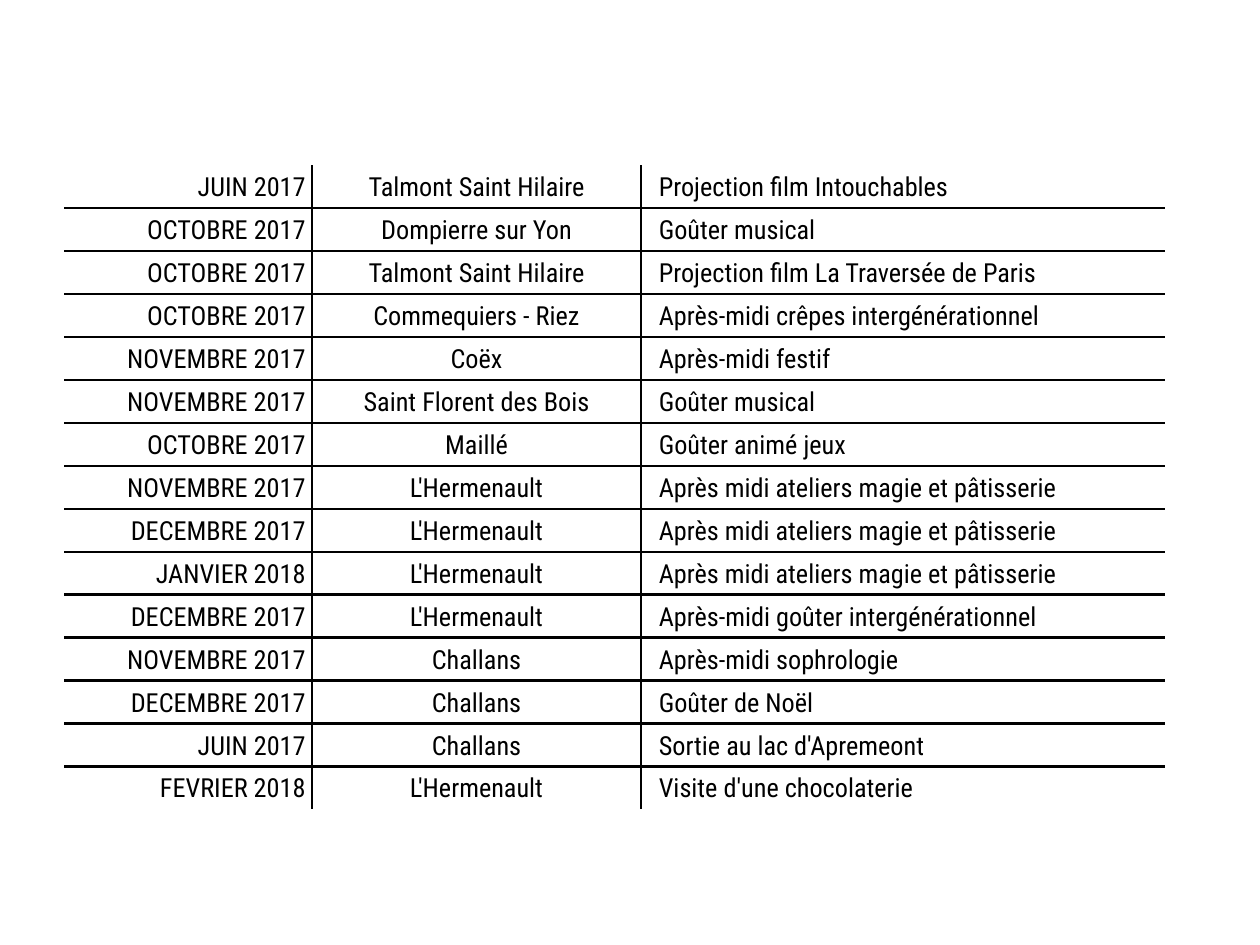
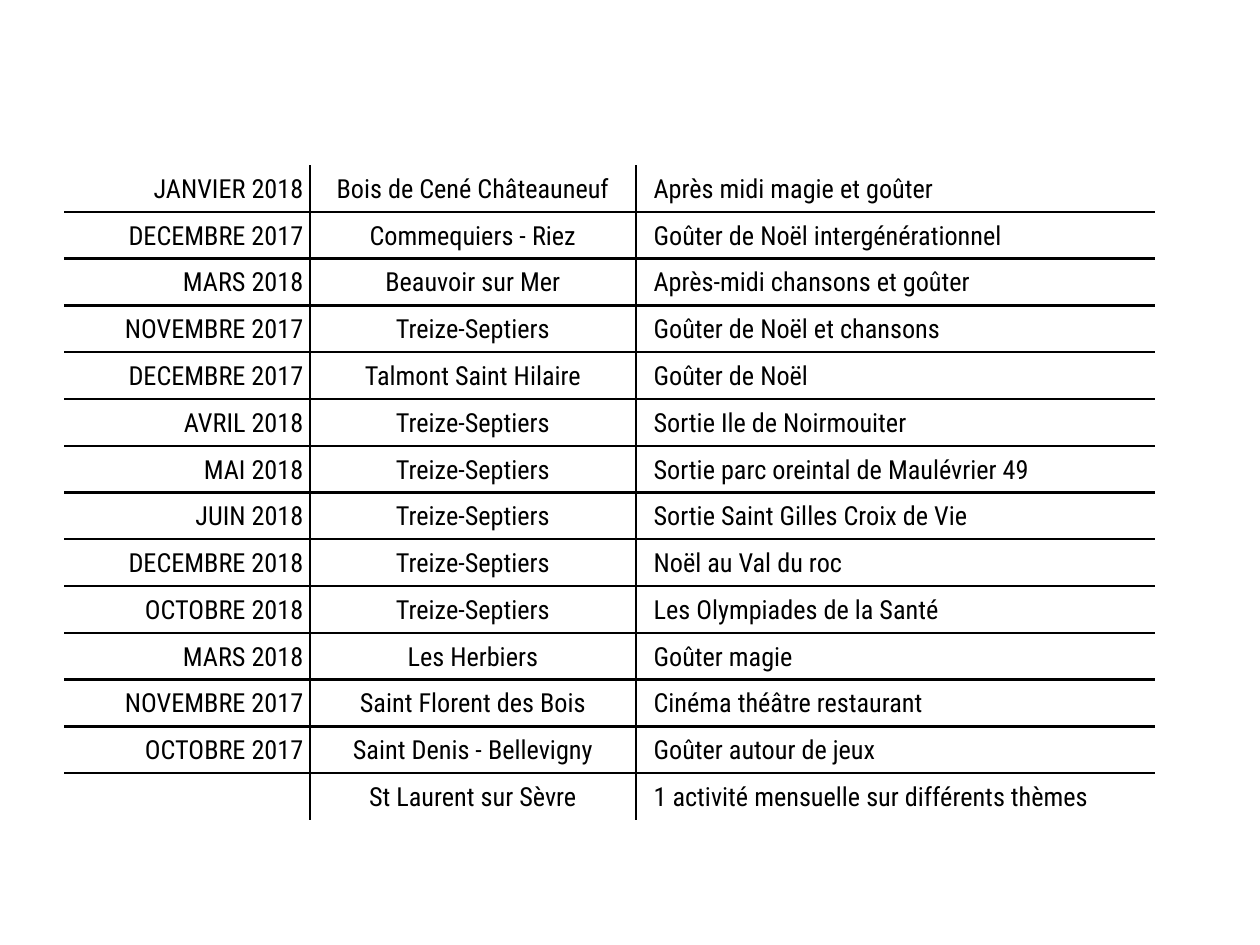
from lxml import etree
from pptx import Presentation
from pptx.dml.color import RGBColor
from pptx.enum import text
from pptx.oxml import ns
from pptx.util import Pt

ACTIVITIES = [
    [
        ("JUIN 2017", "Talmont Saint Hilaire", "Projection film Intouchables"),
        ("OCTOBRE 2017", "Dompierre sur Yon", "Goûter musical"),
        ("OCTOBRE 2017", "Talmont Saint Hilaire", "Projection film La Traversée de Paris"),
        ("OCTOBRE 2017", "Commequiers - Riez", "Après-midi crêpes intergénérationnel"),
        ("NOVEMBRE 2017", "Coëx", "Après-midi festif"),
        ("NOVEMBRE 2017", "Saint Florent des Bois", "Goûter musical"),
        ("OCTOBRE 2017", "Maillé", "Goûter animé jeux"),
        ("NOVEMBRE 2017", "L'Hermenault", "Après midi ateliers magie et pâtisserie"),
        ("DECEMBRE 2017", "L'Hermenault", "Après midi ateliers magie et pâtisserie"),
        ("JANVIER 2018", "L'Hermenault", "Après midi ateliers magie et pâtisserie"),
        ("DECEMBRE 2017", "L'Hermenault", "Après-midi goûter intergénérationnel"),
        ("NOVEMBRE 2017", "Challans", "Après-midi sophrologie"),
        ("DECEMBRE 2017", "Challans", "Goûter de Noël"),
        ("JUIN 2017", "Challans", "Sortie au lac d'Apremeont"),
        ("FEVRIER 2018", "L'Hermenault", "Visite d'une chocolaterie"),
    ],
    [
        ("JANVIER 2018", "Bois de Cené Châteauneuf", "Après midi magie et goûter"),
        ("DECEMBRE 2017", "Commequiers - Riez", "Goûter de Noël intergénérationnel"),
        ("MARS 2018", "Beauvoir sur Mer", "Après-midi chansons et goûter"),
        ("NOVEMBRE 2017", "Treize-Septiers", "Goûter de Noël et chansons"),
        ("DECEMBRE 2017", "Talmont Saint Hilaire", "Goûter de Noël"),
        ("AVRIL 2018", "Treize-Septiers", "Sortie Ile de Noirmouiter"),
        ("MAI 2018", "Treize-Septiers", "Sortie parc oreintal de Maulévrier 49"),
        ("JUIN 2018", "Treize-Septiers", "Sortie Saint Gilles Croix de Vie"),
        ("DECEMBRE 2018", "Treize-Septiers", "Noël au Val du roc"),
        ("OCTOBRE 2018", "Treize-Septiers", "Les Olympiades de la Santé"),
        ("MARS 2018", "Les Herbiers", "Goûter magie"),
        ("NOVEMBRE 2017", "Saint Florent des Bois", "Cinéma théâtre restaurant"),
        ("OCTOBRE 2017", "Saint Denis - Bellevigny", "Goûter autour de jeux"),
        ("", "St Laurent sur Sèvre", "1 activité mensuelle sur différents thèmes"),
    ],
]
# Table width and height for each slide
SIZES = [(629.2, 368.6), (623.5, 374.4)]

BLACK = RGBColor(0, 0, 0)
FONT = "Roboto Condensed"
LEFT, TOP = 36.7, 94.3
COLUMN_SHARES = (0.225, 0.299, 0.476)
ALIGNS = (text.PP_ALIGN.RIGHT, text.PP_ALIGN.CENTER, text.PP_ALIGN.LEFT)
LEFT_MARGINS = (3.6, 3.6, 10.1)
RULE = 1.5


def set_borders(cell, visible):
    """Draw the sides marked true in visible (left, right, top, bottom); hide the others."""
    tc_pr = cell._tc.get_or_add_tcPr()
    for i, (side, shown) in enumerate(zip("LRTB", visible)):
        ln = etree.Element(ns.qn(f"a:ln{side}"), w=str(Pt(RULE)))
        if shown:
            fill = etree.SubElement(ln, ns.qn("a:solidFill"))
            etree.SubElement(fill, ns.qn("a:srgbClr"), val=str(BLACK))
        else:
            etree.SubElement(ln, ns.qn("a:noFill"))
        tc_pr.insert(i, ln)


def fill_cell(cell, content, column):
    cell.fill.background()
    cell.vertical_anchor = text.MSO_ANCHOR.MIDDLE
    cell.margin_left, cell.margin_right = Pt(LEFT_MARGINS[column]), Pt(3.6)
    cell.margin_top = cell.margin_bottom = 0
    if not content:
        return
    p = cell.text_frame.paragraphs[0]
    p.alignment = ALIGNS[column]
    p.line_spacing = 1.07
    r = p.add_run()
    r.text = content
    r.font.name, r.font.size = FONT, Pt(15)
    r.font.color.rgb = BLACK


def add_activity_table(s, rows, width, height):
    n_rows, n_cols = len(rows), len(COLUMN_SHARES)
    table = s.shapes.add_table(n_rows, n_cols, Pt(LEFT), Pt(TOP), Pt(width), Pt(height)).table
    table.first_row = table.horz_banding = False
    for column, share in zip(table.columns, COLUMN_SHARES):
        column.width = Pt(width * share)
    for i, row in enumerate(rows):
        table.rows[i].height = Pt(height / n_rows)
        for j, content in enumerate(row):
            cell = table.cell(i, j)
            fill_cell(cell, content, j)
            set_borders(cell, (j > 0, j < n_cols - 1, i > 0, i < n_rows - 1))


def main():
    prs = Presentation()
    prs.slide_width, prs.slide_height = Pt(720), Pt(540)
    for rows, (width, height) in zip(ACTIVITIES, SIZES):
        s = prs.slides.add_slide(prs.slide_layouts[6])
        add_activity_table(s, rows, width, height)
    prs.save("out.pptx")


if __name__ == "__main__":
    main()
